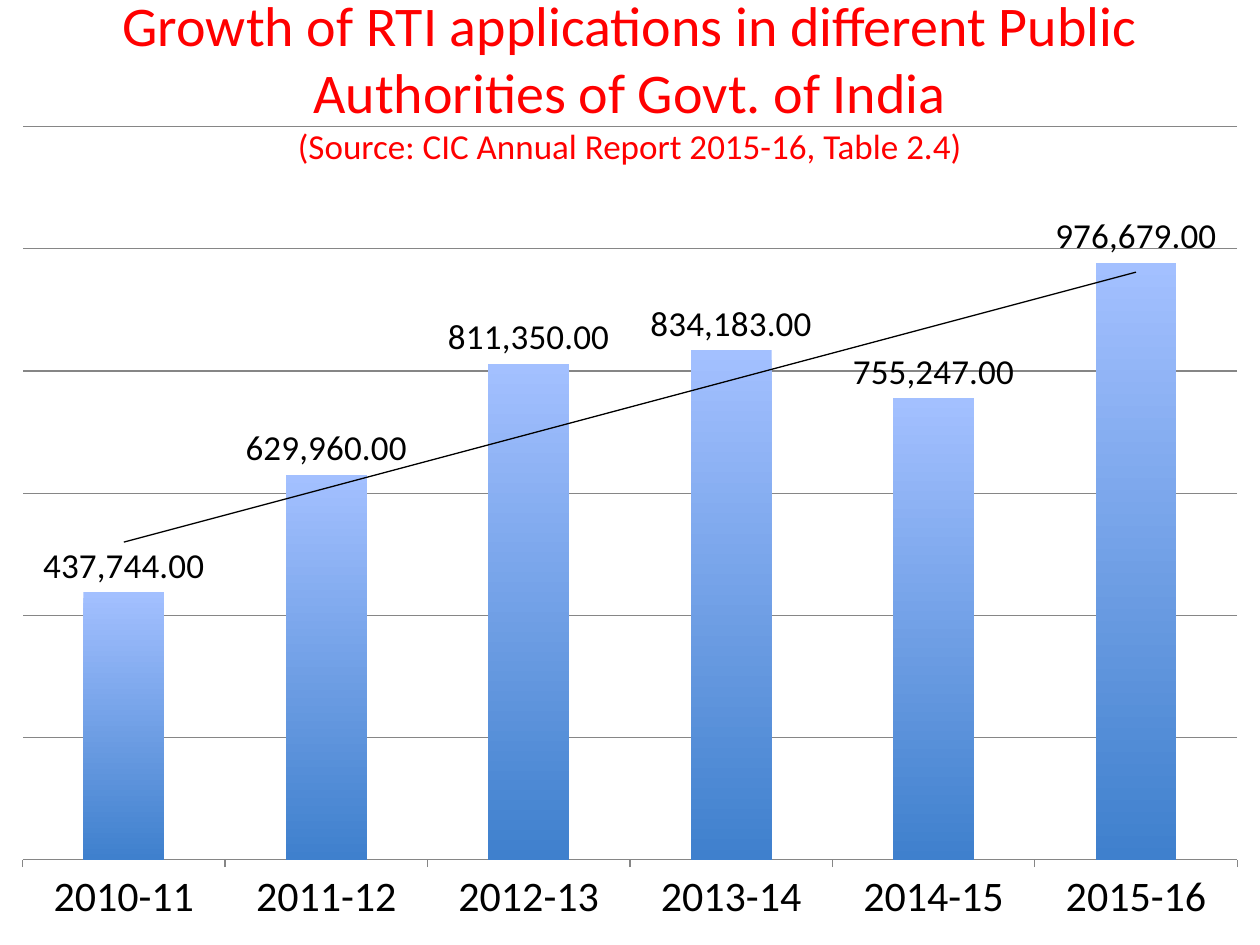
from dataclasses import dataclass

from lxml.etree import SubElement
from pptx import Presentation
from pptx.chart.data import CategoryChartData
from pptx.dml.color import RGBColor
from pptx.enum.chart import XL_CHART_TYPE, XL_LABEL_POSITION, XL_TICK_MARK
from pptx.enum.text import MSO_ANCHOR, PP_ALIGN
from pptx.oxml import parse_xml
from pptx.oxml.ns import nsdecls, qn
from pptx.util import Inches, Pt


@dataclass(frozen=True)
class Theme:
    font: str = "Calibri"
    title_color: RGBColor = RGBColor(0xFF, 0x00, 0x00)
    text_color: RGBColor = RGBColor(0x00, 0x00, 0x00)
    grid_color: RGBColor = RGBColor(0x86, 0x86, 0x86)
    bar_top: RGBColor = RGBColor(0xA3, 0xC0, 0xFF)
    bar_bottom: RGBColor = RGBColor(0x3F, 0x80, 0xCD)
    title_size: int = 32
    source_size: int = 20
    label_size: int = 20
    category_size: int = 24
    chart_size: int = 10


NUMBER_FORMAT = "#,##0.00"
APPLICATIONS = {
    "2010-11": 437744,
    "2011-12": 629960,
    "2012-13": 811350,
    "2013-14": 834183,
    "2014-15": 755247,
    "2015-16": 976679,
}


def format_font(font, name, size, color):
    font.name = name
    font.size = Pt(size)
    font.color.rgb = color


def add_text(paragraph, text, **font_format):
    run = paragraph.add_run()
    run.text = text
    format_font(run.font, **font_format)


def set_plot_area(chart, **fractions):
    """Fix the inner plot area as fractions of the chart (x, y, w, h)."""
    plot_area = chart.element.find(".//" + qn("c:plotArea"))
    for old_layout in plot_area.findall(qn("c:layout")):
        plot_area.remove(old_layout)
    layout = parse_xml(f"<c:layout {nsdecls('c')}/>")
    manual = SubElement(layout, qn("c:manualLayout"))
    settings = {"layoutTarget": "inner", "xMode": "edge", "yMode": "edge", **fractions}
    for name, value in settings.items():
        SubElement(manual, qn(f"c:{name}"), val=str(value))
    plot_area.insert(0, layout)


def add_linear_trend(series, color):
    trend = parse_xml(
        f"<c:trendline {nsdecls('c', 'a')}>"
        f'<c:spPr><a:ln w="{Pt(0.75)}"><a:solidFill><a:srgbClr val="{color}"/>'
        "</a:solidFill></a:ln></c:spPr>"
        '<c:trendlineType val="linear"/><c:dispRSqr val="0"/><c:dispEq val="0"/>'
        "</c:trendline>"
    )
    series._element.find(qn("c:cat")).addprevious(trend)


class SlideBuilder:
    def __init__(self, slide, theme):
        self.slide = slide
        self.theme = theme

    def font_format(self, size, color):
        return {"name": self.theme.font, "size": size, "color": color}

    def add_title(self, title, source, left, top, width, height):
        theme = self.theme
        box = self.slide.shapes.add_textbox(left, top, width, height)
        frame = box.text_frame
        frame.word_wrap = True
        frame.vertical_anchor = MSO_ANCHOR.MIDDLE
        paragraph = frame.paragraphs[0]
        paragraph.alignment = PP_ALIGN.CENTER
        add_text(paragraph, title, **self.font_format(theme.title_size, theme.title_color))
        paragraph.add_line_break()
        add_text(paragraph, source, **self.font_format(theme.source_size, theme.title_color))

    def add_column_chart(self, values, left, top, width, height):
        theme = self.theme
        data = CategoryChartData(number_format=NUMBER_FORMAT)
        data.categories = list(values)
        data.add_series("Series 1", list(values.values()))
        chart = self.slide.shapes.add_chart(
            XL_CHART_TYPE.COLUMN_CLUSTERED, left, top, width, height, data
        ).chart
        chart.has_legend = False
        chart.has_title = False
        format_font(chart.font, **self.font_format(theme.chart_size, theme.text_color))
        set_plot_area(chart, x=0.018, y=0, w=0.964, h=0.896)
        self.style_axes(chart)
        self.style_columns(chart.plots[0])

    def style_axes(self, chart):
        theme = self.theme
        category_axis = chart.category_axis
        category_axis.major_tick_mark = XL_TICK_MARK.OUTSIDE
        category_axis.format.line.color.rgb = theme.grid_color
        format_font(
            category_axis.tick_labels.font,
            **self.font_format(theme.category_size, theme.text_color),
        )
        value_axis = chart.value_axis
        value_axis.minimum_scale = 0
        value_axis.maximum_scale = 1200000
        value_axis.major_unit = 200000
        value_axis.visible = False
        value_axis.has_major_gridlines = True
        value_axis.major_gridlines.format.line.color.rgb = theme.grid_color
        value_axis.major_gridlines.format.line.width = Pt(0.75)

    def style_columns(self, plot):
        theme = self.theme
        plot.gap_width = 150
        plot.vary_by_categories = False
        series = plot.series[0]
        fill = series.format.fill
        fill.gradient()
        fill.gradient_angle = 270
        for stop, color in zip(fill.gradient_stops, (theme.bar_top, theme.bar_bottom)):
            stop.color.rgb = color
        series.format.line.fill.background()
        labels = series.data_labels
        labels.show_value = True
        labels.number_format = NUMBER_FORMAT
        labels.number_format_is_linked = False
        labels.position = XL_LABEL_POSITION.OUTSIDE_END
        format_font(labels.font, **self.font_format(theme.label_size, theme.text_color))
        add_linear_trend(series, theme.text_color)


def main():
    presentation = Presentation()
    presentation.slide_width = Inches(10)
    presentation.slide_height = Inches(7.5)
    slide = presentation.slides.add_slide(presentation.slide_layouts[6])
    builder = SlideBuilder(slide, Theme())
    builder.add_title(
        "Growth of RTI applications in different Public Authorities of Govt. of India",
        "(Source: CIC Annual Report 2015-16, Table 2.4)",
        Inches(0), Inches(0), Inches(10), Inches(1.25),
    )
    builder.add_column_chart(APPLICATIONS, Inches(0), Inches(1), Inches(10), Inches(6.5))
    presentation.save("out.pptx")


if __name__ == "__main__":
    main()
